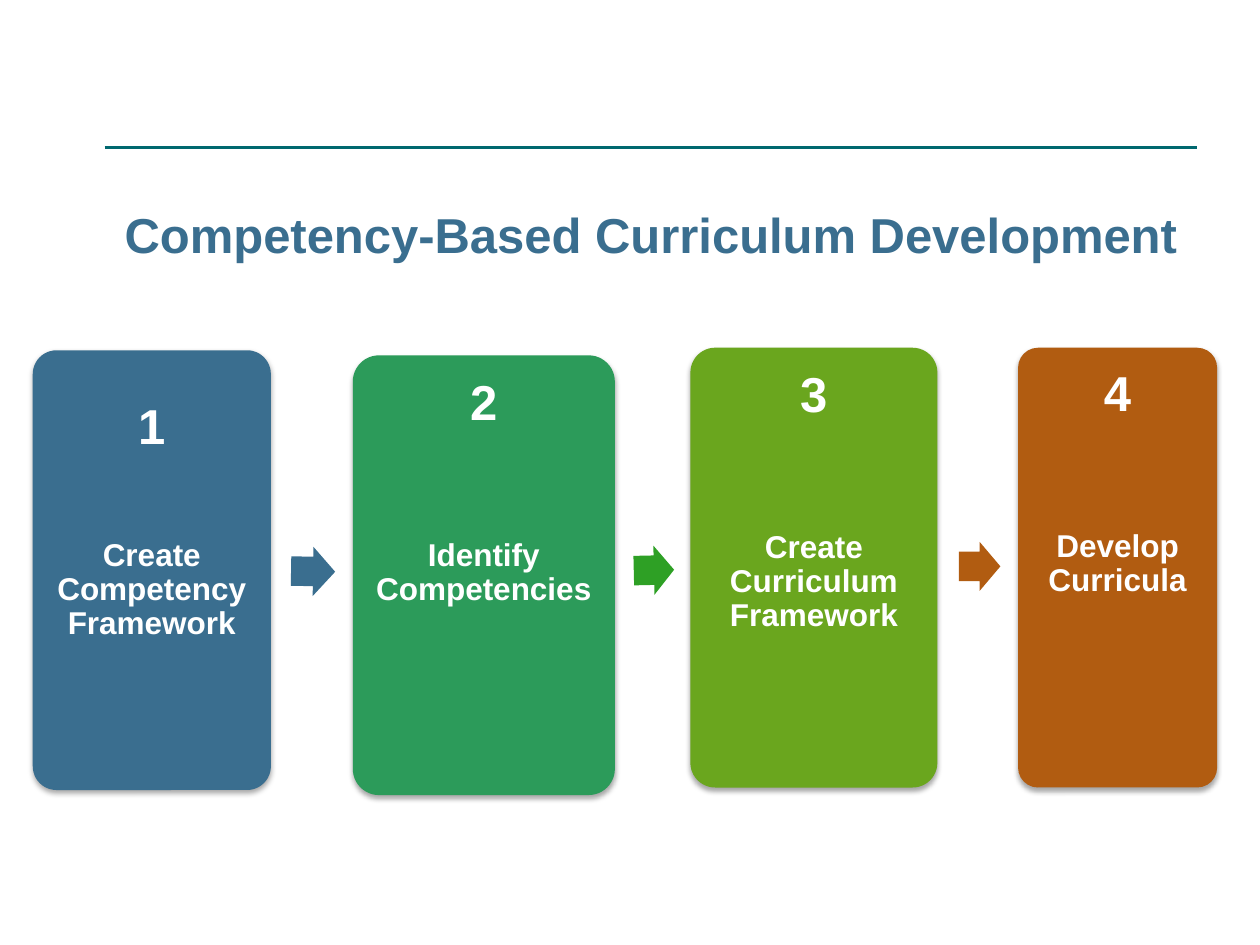
from dataclasses import dataclass

from lxml.etree import SubElement
from pptx import Presentation
from pptx.dml.color import RGBColor
from pptx.enum.shapes import MSO_CONNECTOR, MSO_SHAPE
from pptx.enum.text import MSO_ANCHOR as Anchor, PP_ALIGN as Align
from pptx.oxml.ns import qn
from pptx.util import Inches, Pt

FONT = "Arial"
COLORS = {
    "blue": "3A6E8F",
    "green": "2C9B5A",
    "leaf": "2EA025",
    "lime": "6AA61E",
    "rust": "B15C11",
    "teal": "00686F",
    "white": "FFFFFF",
    "shadow": "000000",
}
CARD_HEIGHT = 3.49
ARROW_HEIGHT = 0.39
INSET = 0.12


@dataclass
class Card:
    number: str
    label: str
    left: float
    top: float
    width: float
    color: str
    text_top: float = INSET
    label_gap: float = 62


@dataclass
class Arrow:
    left: float
    top: float
    width: float
    color: str
    rotation: float = 0


CARDS = [
    Card("1", "Create Competency Framework", 0.26, 2.78, 1.89, "blue", 0.36, 48),
    Card("2", "Identify Competencies", 2.8, 2.82, 2.08, "green"),
    Card("3", "Create Curriculum Framework", 5.48, 2.76, 1.96, "lime"),
    Card("4", "Develop Curricula", 8.08, 2.76, 1.58, "rust"),
]
ARROWS = [
    Arrow(2.31, 4.34, 0.35, "blue", 0.9),
    Arrow(5.03, 4.33, 0.32, "leaf", 358.7),
    Arrow(7.61, 4.3, 0.33, "rust"),
]


def rgb(name: str) -> RGBColor:
    return RGBColor.from_string(COLORS[name])


def format_text(para, size: float, color: str) -> None:
    para.alignment = Align.CENTER
    for span in para.runs:
        span.font.name = FONT
        span.font.size = Pt(size)
        span.font.bold = True
        span.font.color.rgb = rgb(color)


def set_insets(frame, side: float, top: float) -> None:
    frame.margin_left = frame.margin_right = frame.margin_bottom = Inches(side)
    frame.margin_top = Inches(top)


def add_soft_shadow(shape) -> None:
    effects = shape._element.spPr.find(qn("a:effectLst"))
    shadow = SubElement(effects, qn("a:outerShdw"), blurRad=str(Pt(3.1)),
                        dist=str(Pt(1.8)), dir="5400000", rotWithShape="0")
    color = SubElement(shadow, qn("a:srgbClr"), val=COLORS["shadow"])
    SubElement(color, qn("a:alpha"), val="35000")


def add_filled_shape(page, kind, left: float, top: float, width: float,
                     height: float, color: str):
    shape = page.shapes.add_shape(kind, Inches(left), Inches(top),
                                  Inches(width), Inches(height))
    shape.shadow.inherit = False
    shape.fill.solid()
    shape.fill.fore_color.rgb = rgb(color)
    shape.line.fill.background()
    return shape


def add_card(page, card: Card) -> None:
    box = add_filled_shape(page, MSO_SHAPE.ROUNDED_RECTANGLE, card.left,
                           card.top, card.width, CARD_HEIGHT, card.color)
    box.adjustments[0] = 0.1
    add_soft_shadow(box)
    frame = box.text_frame
    frame.word_wrap = True
    frame.vertical_anchor = Anchor.TOP
    set_insets(frame, INSET, card.text_top)
    frame.text = f"{card.number}\n{card.label}"
    number, label = frame.paragraphs
    for para, size in ((number, 28), (label, 18)):
        format_text(para, size, "white")
        para.line_spacing = 0.9
    number.space_after = Pt(card.label_gap)


def add_arrow(page, arrow: Arrow) -> None:
    shape = add_filled_shape(page, MSO_SHAPE.RIGHT_ARROW, arrow.left, arrow.top,
                             arrow.width, ARROW_HEIGHT, arrow.color)
    shape.adjustments[0] = 0.6
    shape.adjustments[1] = 0.5
    shape.rotation = arrow.rotation


def add_rule(page) -> None:
    rule = page.shapes.add_connector(MSO_CONNECTOR.STRAIGHT, Inches(0.83),
                                     Inches(1.17), Inches(9.5), Inches(1.17))
    rule.line.color.rgb = rgb("teal")
    rule.line.width = Pt(1.75)
    SubElement(rule._element.spPr, qn("a:effectLst"))


def set_title(page, text: str) -> None:
    title = page.shapes.title
    title.left, title.top = Inches(0.83), Inches(1.42)
    title.width, title.height = Inches(8.67), Inches(0.67)
    frame = title.text_frame
    frame.text = text
    frame.word_wrap = True
    frame.vertical_anchor = Anchor.BOTTOM
    set_insets(frame, 0, 0)
    para = frame.paragraphs[0]
    format_text(para, 28, "blue")
    para.line_spacing = Pt(34)


def main() -> None:
    deck = Presentation()
    deck.slide_width, deck.slide_height = Inches(10), Inches(7.5)
    page = deck.slides.add_slide(deck.slide_layouts.get_by_name("Title Only"))
    add_rule(page)
    set_title(page, "Competency-Based Curriculum Development")
    for card in CARDS:
        add_card(page, card)
    for arrow in ARROWS:
        add_arrow(page, arrow)
    deck.save("out.pptx")


if __name__ == "__main__":
    main()
